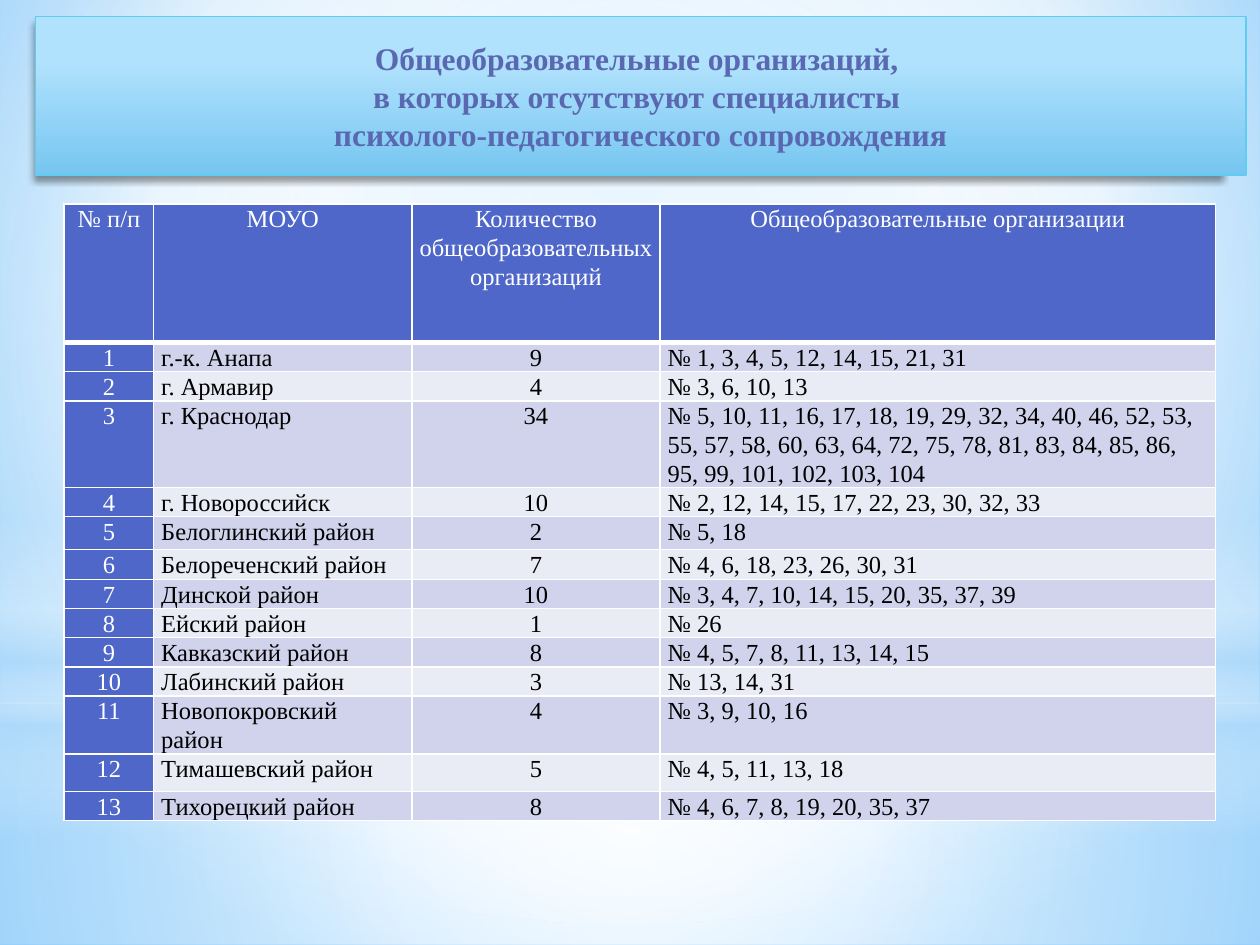
from dataclasses import dataclass

from lxml import etree
from pptx import Presentation, util as u
from pptx.dml.color import RGBColor
from pptx.enum import shapes, text
from pptx.oxml.ns import qn

WIDTH, HEIGHT = u.Inches(10), u.Inches(7.5)


@dataclass(frozen=True)
class Theme:
    """Colours, font and type sizes of the slide."""
    font: str = "Times New Roman"
    title_size: int = 18
    table_size: int = 14
    title: str = "5968B0"
    outline: str = "5ECCF3"
    header: str = "4E67C8"
    odd_row: str = "D0D3EB"
    even_row: str = "E9EBF5"
    white: str = "FFFFFF"
    black: str = "000000"
    haze: str = "B4DCFA"
    panel: tuple = ((0, "B1E2FD"), (28, "B1E2FD"), (100, "76C6F1"))
    sky: tuple = ((0, "9ED5FF"), (60, "FFFFFF"), (100, "5BB9FF"))


THEME = Theme()
CENTRE = (50, 50, 50, 50)
RECT, OVAL = shapes.MSO_SHAPE.RECTANGLE, shapes.MSO_SHAPE.OVAL

BACKDROP = [
    (RECT, 0.744, 0.256, CENTRE,
     [(0, THEME.white, 91), (37, THEME.white, 76), (100, THEME.haze, 79)]),
    (RECT, 0, 0.744, CENTRE,
     [(0, THEME.white, 89), (48, THEME.white, 62), (100, THEME.haze, 79)]),
    (RECT, 0.55, 0.333, None,
     [(0, THEME.white, 0), (29, THEME.white, 30), (45, THEME.haze, 40),
      (55, THEME.white, 26), (65, THEME.haze, 60), (100, THEME.white, 0)]),
    (OVAL, 0.233, 0.744, CENTRE, [(0, THEME.white, 100), (56, THEME.white, 0)]),
]

TITLE = ["Общеобразовательные организаций, ", "в которых отсутствуют специалисты ",
         "психолого-педагогического сопровождения"]
HEADINGS = ["№ п/п", "МОУО", "Количество общеобразовательных организаций",
            "Общеобразовательные организации"]
DISTRICTS = [
    ("г.-к. Анапа", 9, "1, 3, 4, 5, 12, 14, 15, 21, 31"),
    ("г. Армавир", 4, "3, 6, 10, 13"),
    ("г. Краснодар", 34, "5, 10, 11, 16, 17, 18, 19, 29, 32, 34, 40, 46, 52, 53, 55, 57, 58, "
     "60, 63, 64, 72, 75, 78, 81, 83, 84, 85, 86, 95, 99, 101, 102, 103, 104"),
    ("г. Новороссийск", 10, "2, 12, 14, 15, 17, 22, 23, 30, 32, 33"),
    ("Белоглинский район", 2, "5, 18"),
    ("Белореченский район", 7, "4, 6, 18, 23, 26, 30, 31"),
    ("Динской район", 10, "3, 4, 7, 10, 14, 15, 20, 35, 37, 39"),
    ("Ейский район", 1, "26"),
    ("Кавказский район", 8, "4, 5, 7, 8, 11, 13, 14, 15"),
    ("Лабинский район", 3, "13, 14, 31"),
    ("Новопокровский район", 4, "3, 9, 10, 16"),
    ("Тимашевский район", 5, "4, 5, 11, 13, 18"),
    ("Тихорецкий район", 8, "4, 6, 7, 8, 19, 20, 35, 37"),
]
COLUMNS = [0.71, 2.05, 1.97, 4.41]
ROW_HEIGHT = 0.21
TALL_ROWS = {0: 1.1, 3: 0.48, 5: 0.26, 6: 0.24, 11: 0.24, 12: 0.3}


def child(parent, tag, **attributes):
    """Append a drawing element with the given attributes."""
    node = etree.SubElement(parent, qn(f"a:{tag}"))
    for name, value in attributes.items():
        node.set(name, str(value))
    return node


def paint_gradient(fill, element, stops, focus=None):
    """Fill with colour stops, vertical or radiating from a focus."""
    fill.gradient()
    gradient = element.find(f".//{qn('a:gradFill')}")
    for old in list(gradient):
        gradient.remove(old)
    stop_list = child(gradient, "gsLst")
    for position, colour, *opacity in stops:
        stop = child(stop_list, "gs", pos=position * 1000)
        shade = child(stop, "srgbClr", val=colour)
        if opacity and opacity[0] < 100:
            child(shade, "alpha", val=opacity[0] * 1000)
    if focus:
        circle = child(gradient, "path", path="circle")
        child(circle, "fillToRect", **{side: share * 1000 for side, share in zip("ltrb", focus)})
    else:
        child(gradient, "lin", ang=5400000, scaled=0)


def add_span(para, words, size, colour, bold=False):
    """Add one formatted run to a paragraph."""
    span = para.add_run()
    span.text = words
    span.font.name, span.font.size, span.font.bold = THEME.font, u.Pt(size), bold
    span.font.color.rgb = RGBColor.from_string(colour)


def add_backdrop(page):
    """Paint the sky and its layers of haze."""
    paint_gradient(page.background.fill, page.element, THEME.sky, (20, 10, 20, 60))
    for kind, top, height, focus, stops in BACKDROP:
        box = page.shapes.add_shape(kind, 0, int(HEIGHT * top), WIDTH, int(HEIGHT * height))
        box.shadow.inherit = False
        box.line.fill.background()
        paint_gradient(box.fill, box.element, stops, focus)


def add_title(page):
    """Format the title placeholder as a shaded panel above the backdrop."""
    box = page.shapes.title
    page.shapes.element.append(box.element)
    box.left, box.top = u.Inches(0.28), u.Inches(0.13)
    box.width, box.height = u.Inches(9.61), u.Inches(1.26)
    paint_gradient(box.fill, box.element, THEME.panel)
    box.line.color.rgb = RGBColor.from_string(THEME.outline)
    box.line.width = u.Pt(0.75)
    effects = child(box.element.spPr, "effectLst")
    shadow = child(effects, "outerShdw", blurRad=50800, dist=50800, dir=5400000,
                   sx=98000, sy=98000, algn="tl", rotWithShape=0)
    child(child(shadow, "srgbClr", val=THEME.black), "alpha", val=40000)
    frame = box.text_frame
    frame.auto_size = text.MSO_AUTO_SIZE.NONE
    frame.vertical_anchor = text.MSO_ANCHOR.MIDDLE
    para = frame.paragraphs[0]
    para.alignment = text.PP_ALIGN.CENTER
    for number, line in enumerate(TITLE):
        if number:
            para.add_line_break()
        add_span(para, line, THEME.title_size, THEME.title, bold=True)


def set_borders(cell, row):
    """Draw white cell borders, thick below the header row."""
    widths = {"L": 1, "R": 1, "T": 3 if row == 1 else 1, "B": 3 if row == 0 else 1}
    properties = cell._tc.get_or_add_tcPr()
    for index, (side, width) in enumerate(widths.items()):
        line = child(properties, f"ln{side}", w=u.Pt(width))
        child(child(line, "solidFill"), "srgbClr", val=THEME.white)
        properties.insert(index, line)


def fill_cell(cell, words, row, column):
    """Write and colour one table cell by its row and column."""
    heading = row == 0 or column == 0
    band = THEME.odd_row if row % 2 else THEME.even_row
    cell.fill.solid()
    cell.fill.fore_color.rgb = RGBColor.from_string(THEME.header if heading else band)
    cell.margin_left = cell.margin_right = u.Inches(0.06)
    cell.margin_top = cell.margin_bottom = 0
    para = cell.text_frame.paragraphs[0]
    centred = heading or column == 2
    para.alignment = text.PP_ALIGN.CENTER if centred else text.PP_ALIGN.LEFT
    para.line_spacing = 1.07
    add_span(para, words, THEME.table_size, THEME.white if heading else THEME.black)
    set_borders(cell, row)


def add_district_table(page):
    """Add the numbered table of districts."""
    rows = [HEADINGS] + [(str(number), name, str(count), f"№ {schools}")
                         for number, (name, count, schools) in enumerate(DISTRICTS, 1)]
    heights = [TALL_ROWS.get(row, ROW_HEIGHT) for row in range(len(rows))]
    table = page.shapes.add_table(len(rows), len(COLUMNS), u.Inches(0.51), u.Inches(1.62),
                                  u.Inches(sum(COLUMNS)), u.Inches(sum(heights))).table
    for column, width in zip(table.columns, COLUMNS):
        column.width = u.Inches(width)
    for row, (values, height) in enumerate(zip(rows, heights)):
        table.rows[row].height = u.Inches(height)
        for column, words in enumerate(values):
            fill_cell(table.cell(row, column), words, row, column)


def main():
    """Build and save the deck."""
    deck = Presentation()
    deck.slide_width, deck.slide_height = WIDTH, HEIGHT
    page = deck.slides.add_slide(deck.slide_layouts[5])
    add_backdrop(page)
    add_title(page)
    add_district_table(page)
    deck.save("out.pptx")


if __name__ == "__main__":
    main()
